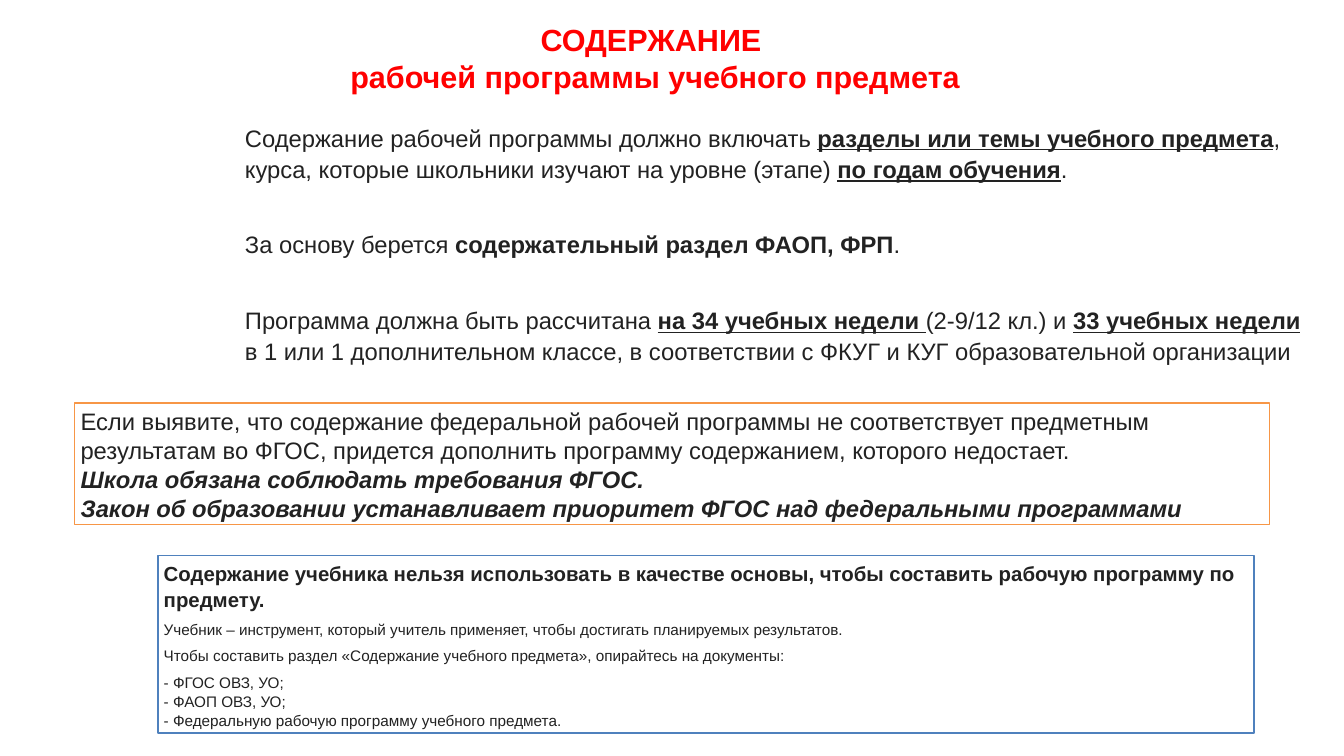
from pptx import Presentation
from pptx.dml.color import RGBColor
from pptx.enum.shapes import MSO_SHAPE
from pptx.enum.text import MSO_ANCHOR, PP_ALIGN
from pptx.util import Pt

RED = RGBColor(0xFF, 0x00, 0x00)
DARK = RGBColor(0x22, 0x22, 0x22)
WHITE = RGBColor(0xFF, 0xFF, 0xFF)
ORANGE = RGBColor(0xF7, 0x96, 0x46)
BLUE = RGBColor(0x4F, 0x81, 0xBD)

LEAD = 1.22
LOOSE = 1.07 * LEAD


def add_par(frame, first, parts, size, color=DARK, lead=LEAD, after=0,
            align=PP_ALIGN.LEFT):
    """Add one paragraph; parts pair a text with its style letters b, i, u."""
    par = frame.paragraphs[0] if first else frame.add_paragraph()
    par.alignment = align
    par.line_spacing = Pt(round(size * lead, 1))
    par.space_after = Pt(after)
    for text, style in parts:
        run = par.add_run()
        run.text = text
        font = run.font
        font.name = "Arial"
        font.size = Pt(size)
        font.color.rgb = color
        font.bold = "b" in style
        font.italic = "i" in style
        font.underline = "u" in style


def add_text(slide, box, wrap=True):
    frame = slide.shapes.add_textbox(*map(Pt, box)).text_frame
    frame.word_wrap = wrap
    return frame


def add_panel(slide, box, color):
    panel = slide.shapes.add_shape(MSO_SHAPE.RECTANGLE, *map(Pt, box))
    panel.shadow.inherit = False
    panel.fill.solid()
    panel.fill.fore_color.rgb = WHITE
    panel.line.color.rgb = color
    panel.line.width = Pt(2)
    frame = panel.text_frame
    frame.word_wrap = True
    frame.vertical_anchor = MSO_ANCHOR.TOP
    return frame


def add_title(slide):
    frame = add_text(slide, (401.8, 20.2, 740.2, 94.3), wrap=False)
    lines = ["СОДЕРЖАНИЕ ", "рабочей программы учебного предмета"]
    for i, text in enumerate(lines):
        add_par(frame, i == 0, [(text, "b")], 36, RED, align=PP_ALIGN.CENTER)


def add_rules(slide):
    frame = add_text(slide, (281.5, 139, 1278, 335.5))
    rules = [
        [("Содержание рабочей программы должно включать ", ""),
         ("разделы или темы учебного предмета", "bu"),
         (", курса, которые школьники изучают на уровне (этапе) ", ""),
         ("по годам обучения", "bu"), (".", "")],
        [("За основу берется ", ""),
         ("содержательный раздел ФАОП, ФРП", "b"), (".", "")],
        [("Программа должна быть рассчитана ", ""),
         ("на 34 учебных недели ", "bu"), ("(2-9/12 кл.) и ", ""),
         ("33 учебных недели ", "bu"),
         ("в 1 или 1 дополнительном классе, в соответствии с ФКУГ и КУГ "
          "образовательной организации", "")],
    ]
    for i, parts in enumerate(rules):
        add_par(frame, i == 0, parts, 28, lead=LOOSE, after=52.5)


def add_law(slide):
    frame = add_panel(slide, (87.8, 474.5, 1407.6, 143.3), ORANGE)
    lines = [
        ("Если выявите, что содержание федеральной рабочей программы не "
         "соответствует предметным результатам во ФГОС, придется дополнить "
         "программу содержанием, которого недостает.", ""),
        ("Школа обязана соблюдать требования ФГОС.", "bi"),
        ("Закон об образовании устанавливает приоритет ФГОС над "
         "федеральными программами", "bi"),
    ]
    for i, part in enumerate(lines):
        add_par(frame, i == 0, [part], 28)


def add_advice(slide):
    frame = add_panel(slide, (185.8, 654.5, 1291.7, 208.8), BLUE)
    add_par(frame, True,
            [("Содержание учебника нельзя использовать в качестве основы, "
              "чтобы составить рабочую программу по предмету.", "b")],
            24, lead=LOOSE, after=8)
    lines = [
        ("Учебник – инструмент, который учитель применяет, чтобы достигать "
         "планируемых результатов.", LOOSE, 7.5),
        ("Чтобы составить раздел «Содержание учебного предмета», опирайтесь "
         "на документы:", LOOSE, 7.5),
        ("- ФГОС ОВЗ, УО;", LOOSE, 0),
        ("- ФАОП ОВЗ, УО;", LOOSE, 0),
        ("- Федеральную рабочую программу учебного предмета.", LEAD, 0),
    ]
    for text, lead, after in lines:
        add_par(frame, False, [(text, "")], 18, lead=lead, after=after)


def main():
    deck = Presentation()
    deck.slide_width = Pt(1583.3)
    deck.slide_height = Pt(890.6)
    slide = deck.slides.add_slide(deck.slide_layouts[6])
    add_law(slide)
    add_advice(slide)
    add_rules(slide)
    add_title(slide)
    deck.save("out.pptx")


if __name__ == "__main__":
    main()
